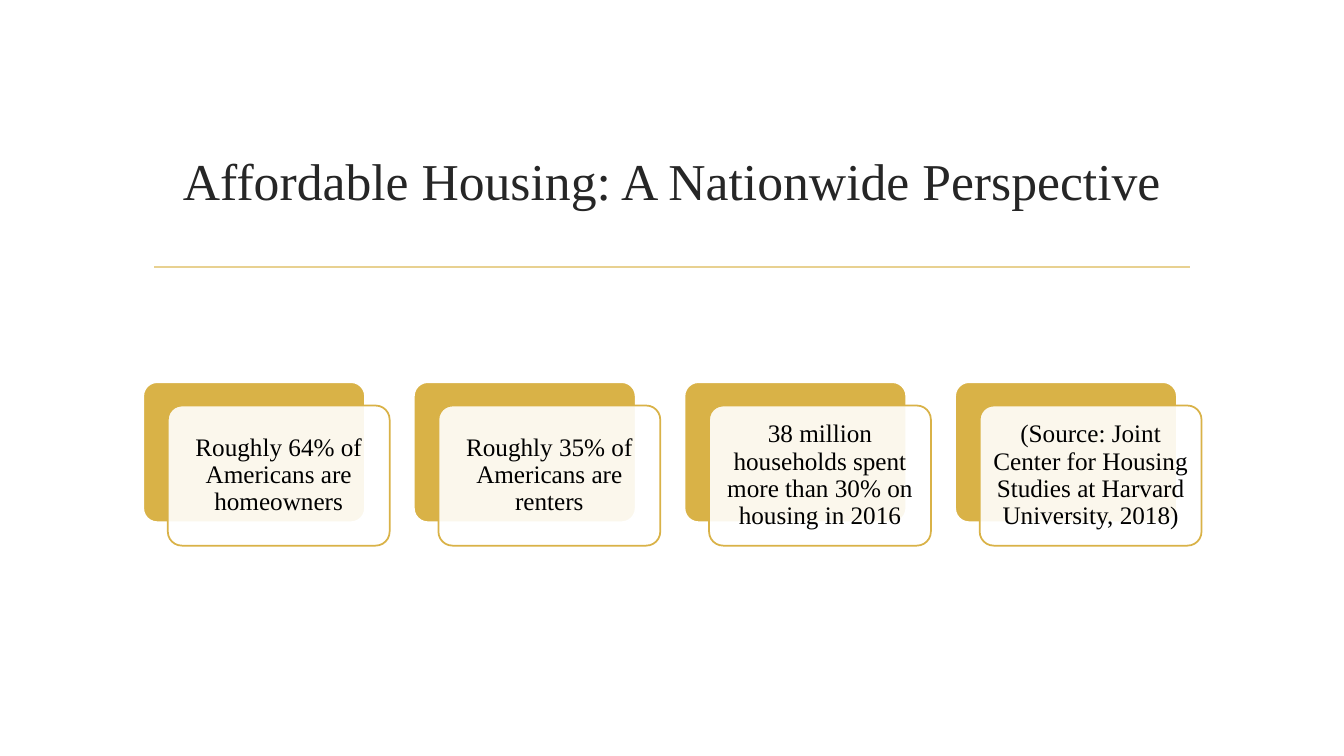
from dataclasses import dataclass

from lxml.etree import SubElement
from pptx import Presentation
from pptx.dml.color import RGBColor as RGB
from pptx.enum.shapes import MSO_CONNECTOR as CONN, MSO_SHAPE as SHAPE
from pptx.enum.text import MSO_ANCHOR as ANCHOR, PP_ALIGN as ALIGN
from pptx.oxml.ns import qn
from pptx.util import Cm, Pt


@dataclass(frozen=True)
class Theme:
    font: str = "Times New Roman"
    gold: RGB = RGB(0xD9, 0xB2, 0x47)
    rule: RGB = RGB(0xE8, 0xD1, 0x91)
    white: RGB = RGB(0xFF, 0xFF, 0xFF)
    title_color: RGB = RGB(0x26, 0x26, 0x26)
    body_color: RGB = RGB(0, 0, 0)
    title_size: float = 36.9
    body_size: float = 18
    line_width: float = 1.25


THEME = Theme()
FACTS = [
    "Roughly 64% of Americans are homeowners",
    "Roughly 35% of Americans are renters",
    "38 million households spent more than 30% on housing in 2016",
    "(Source: Joint Center for Housing Studies at Harvard University, 2018)",
]


def set_attrs(obj, values):
    for name, value in values.items():
        setattr(obj, name, value)


def write(tf, text, size, color, inset, spacing):
    set_attrs(tf, {
        "word_wrap": True, "vertical_anchor": ANCHOR.MIDDLE,
        "margin_left": inset, "margin_right": inset,
        "margin_top": inset, "margin_bottom": inset,
    })
    p = tf.paragraphs[0]
    set_attrs(p, {"alignment": ALIGN.CENTER, "line_spacing": spacing})
    r = p.add_run()
    r.text = text
    set_attrs(r.font, {"name": THEME.font, "size": Pt(size)})
    r.font.color.rgb = color


def add_heading(slide, text, x, y, w, h):
    title = slide.shapes.title
    set_attrs(title, {"left": x, "top": y, "width": w, "height": h})
    write(title.text_frame, text, THEME.title_size, THEME.title_color, Cm(0.25), 1.0)
    rule_y = y + h + Cm(0.38)
    rule = slide.shapes.add_connector(
        CONN.STRAIGHT, x + Cm(0.28), rule_y, x + w - Cm(0.28), rule_y)
    rule.line.color.rgb = THEME.rule
    rule.line.width = Pt(THEME.line_width)
    SubElement(rule._element.spPr, qn("a:effectLst"))


def add_panel(shapes, x, y, w, h, fill, line):
    sp = shapes.add_shape(SHAPE.ROUNDED_RECTANGLE, x, y, w, h)
    sp.adjustments[0] = 0.1
    sp.shadow.inherit = False
    sp.fill.solid()
    sp.fill.fore_color.rgb = fill
    sp.line.color.rgb = line
    sp.line.width = Pt(THEME.line_width)
    return sp


def add_card(shapes, text, x, y, w, h):
    dx, dy = Cm(0.62), Cm(0.59)
    panel_w, panel_h = w - dx, h - dy
    add_panel(shapes, x, y, panel_w, panel_h, THEME.gold, THEME.white)
    front = add_panel(shapes, x + dx, y + dy, panel_w, panel_h, THEME.white, THEME.gold)
    color = front._element.spPr.find(qn("a:solidFill"))[0]
    SubElement(color, qn("a:alpha"), val="90000")
    write(front.text_frame, text, THEME.body_size, THEME.body_color, Cm(0.18), 0.9)


def add_cards(slide, facts, x, y, w, h):
    group = slide.shapes.add_group_shape()
    card_w = Cm(6.21)
    pitch = (w - card_w) // (len(facts) - 1)
    for i, fact in enumerate(facts):
        add_card(group.shapes, fact, x + i * pitch, y, card_w, h)


def main():
    prs = Presentation()
    set_attrs(prs, {"slide_width": Cm(33.87), "slide_height": Cm(19.05)})
    slide = prs.slides.add_slide(prs.slide_layouts[5])
    add_heading(slide, "Affordable Housing: A Nationwide Perspective",
                Cm(3.61), Cm(2.72), Cm(26.67), Cm(3.63))
    add_cards(slide, FACTS, Cm(3.61), Cm(9.63), Cm(26.67), Cm(4.12))
    prs.save("out.pptx")


if __name__ == "__main__":
    main()
